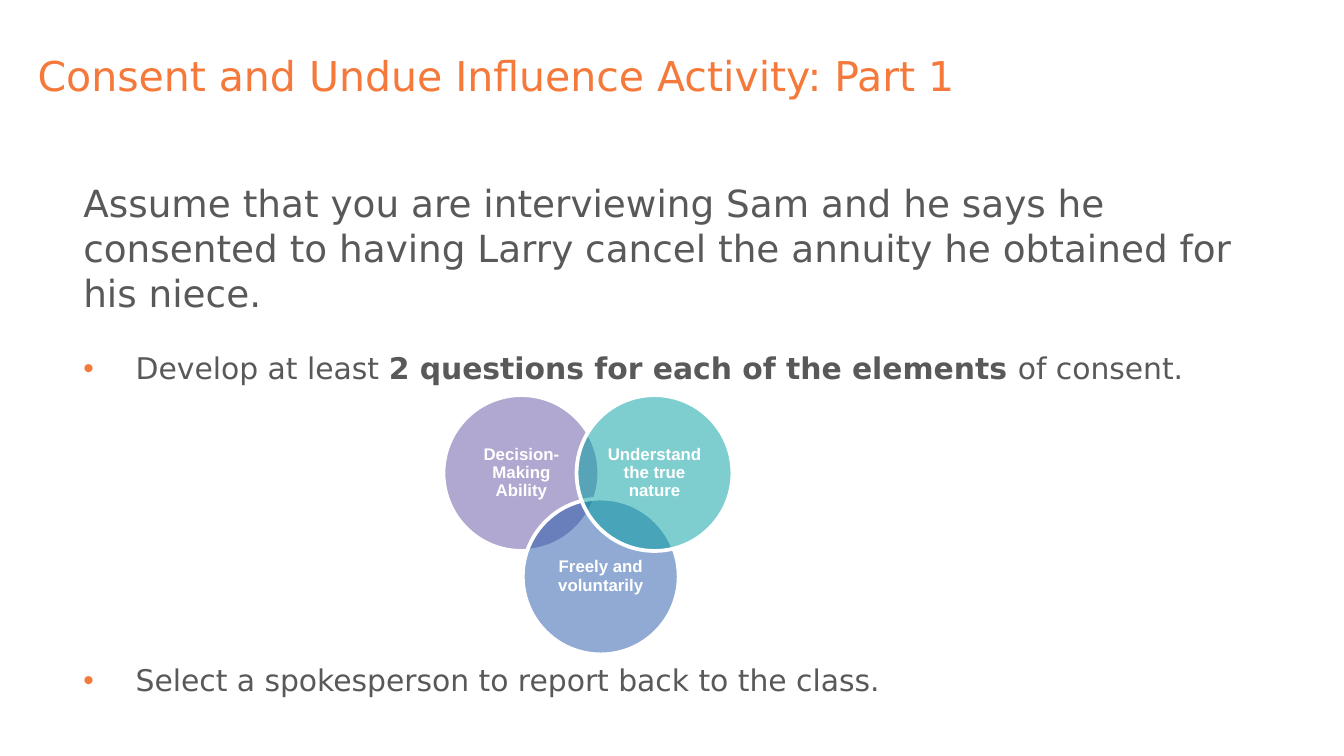
from lxml.etree import SubElement
from pptx import Presentation
from pptx.dml.color import RGBColor
from pptx.enum.shapes import MSO_SHAPE
from pptx.enum.text import MSO_ANCHOR, MSO_AUTO_SIZE, PP_ALIGN
from pptx.oxml.ns import qn
from pptx.util import Inches, Pt

WHITE = RGBColor(0xFF, 0xFF, 0xFF)
ORANGE = RGBColor(0xF4, 0x79, 0x3B)
GREY = RGBColor(0x59, 0x59, 0x59)
PURPLE = RGBColor(0x63, 0x53, 0xA3)
BLUE = RGBColor(0x22, 0x57, 0xA9)
TEAL = RGBColor(0x00, 0x9F, 0xA1)
FONT = "DejaVu Sans"

ASK = ("Assume that you are interviewing Sam and he says he consented to "
       "having Larry cancel the annuity he obtained for his niece.")
# runs (text, bold), size, bullet, space before, line spacing
ITEMS = [
    ([(ASK, False)], 20, False, 0, 1.0),
    ([("Develop at least ", False),
      ("2 questions for each of the elements ", True),
      ("of consent.", False)], 16, True, 19, 1.0),
    ([("Select a spokesperson to report back to the class.", False)],
     16, True, 146, 1.1),
]
# offset from the group's corner, colour, label
RINGS = [
    (0, 0, PURPLE, "Decision-Making Ability"),
    (0.59, 0.77, BLUE, "Freely and voluntarily"),
    (0.99, 0, TEAL, "Understand the true nature"),
]


def place(shape, left, top, width, height):
    shape.left, shape.top = Inches(left), Inches(top)
    shape.width, shape.height = Inches(width), Inches(height)


def set_frame(frame, anchor, side, edge):
    frame.word_wrap = True
    frame.auto_size = MSO_AUTO_SIZE.NONE
    frame.vertical_anchor = anchor
    frame.margin_left = frame.margin_right = Inches(side)
    frame.margin_top = frame.margin_bottom = Inches(edge)


def set_font(font, name, size, color):
    font.name, font.size = name, Pt(size)
    font.color.rgb = color


def set_bullet(para, shown):
    """Set the indent and either an orange bullet or none."""
    props = para._p.get_or_add_pPr()
    left, hang = (0.5, -0.39) if shown else (0.11, 0)
    props.set("marL", str(Inches(left)))
    props.set("indent", str(Inches(hang)))
    if shown:
        tint = SubElement(props, qn("a:buClr"))
        SubElement(tint, qn("a:srgbClr")).set("val", str(ORANGE))
        SubElement(props, qn("a:buFont")).set("typeface", "Arial")
        SubElement(props, qn("a:buChar")).set("char", "•")
    else:
        SubElement(props, qn("a:buNone"))


def add_title(slide, box):
    title = slide.shapes.title
    place(title, *box)
    set_frame(title.text_frame, MSO_ANCHOR.MIDDLE, 0.1, 0.1)
    para = title.text_frame.paragraphs[0]
    para.text = "Consent and Undue Influence Activity: Part 1"
    para.alignment = PP_ALIGN.LEFT
    set_font(para.font, FONT, 22, ORANGE)


def add_body(slide, box):
    body = slide.placeholders[1]
    place(body, *box)
    frame = body.text_frame
    set_frame(frame, MSO_ANCHOR.TOP, 0.1, 0.05)
    for i, (runs, size, bullet, gap, pitch) in enumerate(ITEMS):
        para = frame.add_paragraph() if i else frame.paragraphs[0]
        set_bullet(para, bullet)
        para.space_before, para.line_spacing = Pt(gap), pitch
        set_font(para.font, FONT, size, GREY)
        for text, bold in runs:
            run = para.add_run()
            run.text = text
            if bold:
                run.font.bold = True


def add_venn(slide, left, top, size):
    for dx, dy, color, label in RINGS:
        ring = slide.shapes.add_shape(
            MSO_SHAPE.OVAL, Inches(left + dx), Inches(top + dy),
            Inches(size), Inches(size))
        ring.shadow.inherit = False
        ring.fill.solid()
        ring.fill.fore_color.rgb = color
        tint = ring.fill._xPr.find(qn("a:solidFill"))[0]
        SubElement(tint, qn("a:alpha")).set("val", "50000")
        ring.line.color.rgb = WHITE
        ring.line.width = Pt(2)
        set_frame(ring.text_frame, MSO_ANCHOR.MIDDLE, 0.04, 0.04)
        para = ring.text_frame.paragraphs[0]
        para.text = label
        para.alignment = PP_ALIGN.CENTER
        para.line_spacing = 0.9
        set_font(para.font, "Arial", 9, WHITE)
        para.font.bold = True


def main():
    deck = Presentation()
    deck.slide_width = Inches(10)
    deck.slide_height = deck.slide_width * 9 // 16
    slide = deck.slides.add_slide(deck.slide_layouts[1])
    add_title(slide, (0.18, 0.09, 9, 0.94))
    add_body(slide, (0.41, 1.29, 9.28, 4.07))
    add_venn(slide, 3.3, 2.94, 1.16)
    deck.save("out.pptx")


if __name__ == "__main__":
    main()
